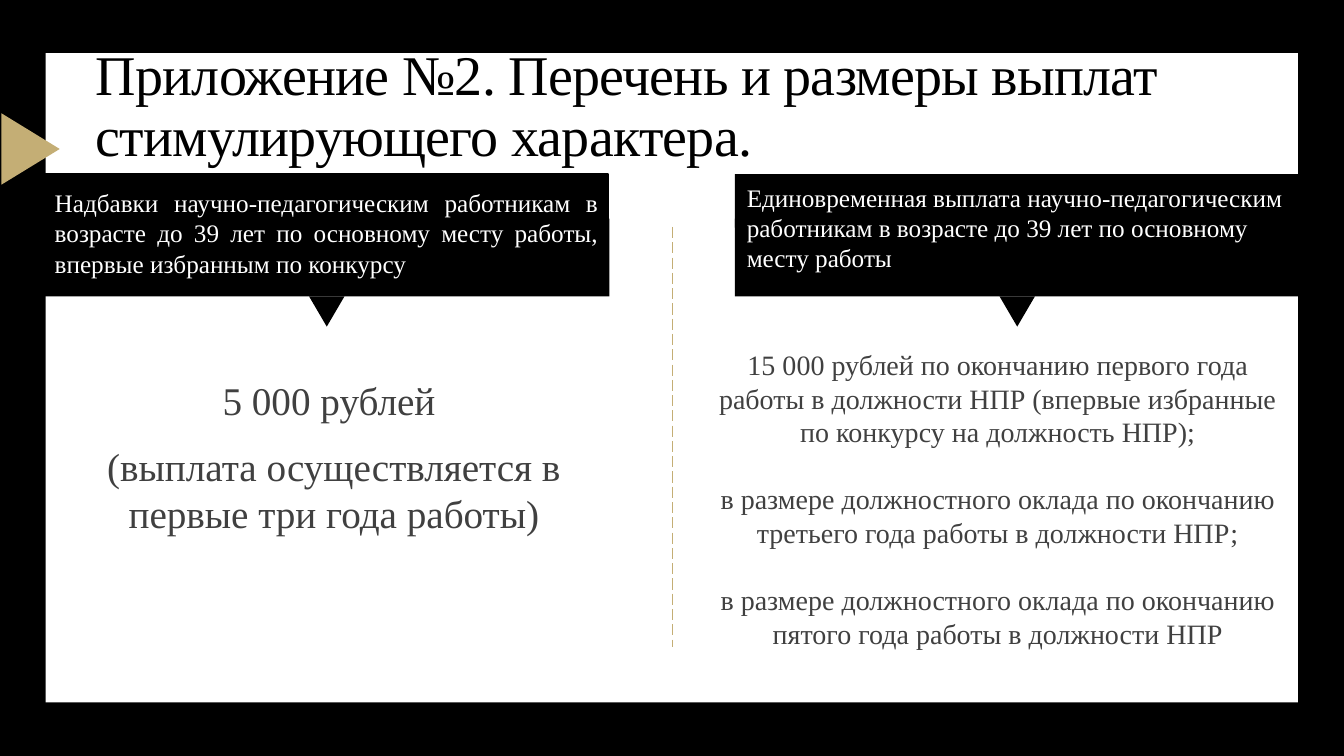
from lxml.etree import SubElement
from pptx import Presentation
from pptx.dml.color import RGBColor
from pptx.enum.dml import MSO_LINE
from pptx.enum.shapes import MSO_CONNECTOR, MSO_SHAPE
from pptx.enum.text import MSO_ANCHOR, MSO_AUTO_SIZE, PP_ALIGN
from pptx.oxml.ns import qn
from pptx.util import Cm, Pt

BLACK = RGBColor(0x00, 0x00, 0x00)
WHITE = RGBColor(0xFF, 0xFF, 0xFF)
GOLD = RGBColor(0xC4, 0xAE, 0x75)
GREY = RGBColor(0x40, 0x40, 0x40)
FONT = "Times New Roman"


class SlideBuilder:
    def __init__(self, slide):
        self.slide = slide
        self.shapes = slide.shapes

    def background(self, color):
        fill = self.slide.background.fill
        fill.solid()
        fill.fore_color.rgb = color

    def style_runs(self, paragraph, size, color):
        for run in paragraph.runs:
            run.font.name = FONT
            run.font.size = Pt(size)
            run.font.color.rgb = color

    def title(self, text, left, top, width, height):
        heading = self.shapes.title
        # Bring the title in front of the white panel
        heading._element.getparent().append(heading._element)
        heading.left, heading.top = Cm(left), Cm(top)
        heading.width, heading.height = Cm(width), Cm(height)
        frame = heading.text_frame
        frame.text = text
        frame.auto_size = MSO_AUTO_SIZE.NONE
        frame.vertical_anchor = MSO_ANCHOR.MIDDLE
        paragraph = frame.paragraphs[0]
        paragraph.alignment = PP_ALIGN.LEFT
        paragraph.line_spacing = 0.9
        paragraph.space_before = Pt(0)
        self.style_runs(paragraph, 40, BLACK)
        paragraph.runs[0].font._element.set("spc", "-50")

    def block(self, kind, left, top, width, height, color, rotation=0, outline=0):
        block = self.shapes.add_shape(kind, Cm(left), Cm(top), Cm(width), Cm(height))
        block.shadow.inherit = False
        block.rotation = rotation
        block.fill.solid()
        block.fill.fore_color.rgb = color
        if outline:
            block.line.color.rgb = color
            block.line.width = Pt(outline)
        else:
            block.line.fill.background()

    def divider(self, x, top, bottom):
        divider = self.shapes.add_connector(
            MSO_CONNECTOR.STRAIGHT, Cm(x), Cm(top), Cm(x), Cm(bottom))
        divider.line.color.rgb = GOLD
        divider.line.width = Pt(1)
        divider.line.dash_style = MSO_LINE.LONG_DASH
        SubElement(divider._element.spPr, qn("a:effectLst"))

    def text(self, lines, left, top, width, height, size, color,
             align=PP_ALIGN.CENTER, gap=0, inset=0.25):
        frame = self.shapes.add_textbox(
            Cm(left), Cm(top), Cm(width), Cm(height)).text_frame
        frame.word_wrap = True
        frame.margin_left = frame.margin_right = Cm(inset)
        frame.text = "\n".join(lines)
        for index, paragraph in enumerate(frame.paragraphs):
            paragraph.alignment = align
            paragraph.space_before = Pt(gap if index else 0)
            self.style_runs(paragraph, size, color)


def main():
    deck = Presentation()
    deck.slide_width, deck.slide_height = Cm(33.87), Cm(19.05)
    page = SlideBuilder(deck.slides.add_slide(deck.slide_layouts[5]))

    # Frame and side marker
    page.background(BLACK)
    page.block(MSO_SHAPE.RECTANGLE, 1.15, 1.34, 31.56, 16.36, WHITE)
    page.block(MSO_SHAPE.ISOSCELES_TRIANGLE, -0.13, 3.02, 1.8, 1.47, GOLD, rotation=90)
    page.divider(16.94, 5.72, 16.31)
    page.title("Приложение №2. Перечень и размеры выплат стимулирующего характера.",
               2.16, 1.37, 28.35, 2.69)

    # Column headers with pointers
    headers = [
        (1.12, 1.13, 4.6, PP_ALIGN.JUSTIFY, 1.25,
         "Надбавки научно-педагогическим работникам в возрасте до 39 лет "
         "по основному месту работы, впервые избранным по конкурсу"),
        (18.52, 18.57, 4.47, PP_ALIGN.LEFT, 0,
         "Единовременная выплата научно-педагогическим работникам "
         "в возрасте до 39 лет по основному месту работы"),
    ]
    for left, text_left, text_top, align, outline, header in headers:
        page.block(MSO_SHAPE.RECTANGLE, left, 5.51, 14.24, 1.96, BLACK)
        page.block(MSO_SHAPE.ISOSCELES_TRIANGLE, left + 6.67, 7.47, 0.89, 0.76,
                   BLACK, rotation=180)
        page.block(MSO_SHAPE.RECTANGLE, left, 4.39, 14.21, 1.35, BLACK, outline=outline)
        page.text([header], text_left, text_top, 14.2, 2.57, 18, WHITE, align)

    # Payment amounts
    page.text(["5 000 рублей ", "(выплата осуществляется в первые три года работы)"],
              2.04, 9.35, 12.75, 7.47, 28, GREY, gap=14, inset=0)
    page.text(["15 000 рублей по окончанию первого года работы в должности НПР "
               "(впервые избранные по конкурсу на должность НПР);",
               "в размере должностного оклада по окончанию третьего года "
               "работы в должности НПР;",
               "в размере должностного оклада по окончанию пятого года "
               "работы в должности НПР"],
              17.55, 8.63, 15.19, 7.95, 20, GREY, gap=24)

    deck.save("out.pptx")


if __name__ == "__main__":
    main()
